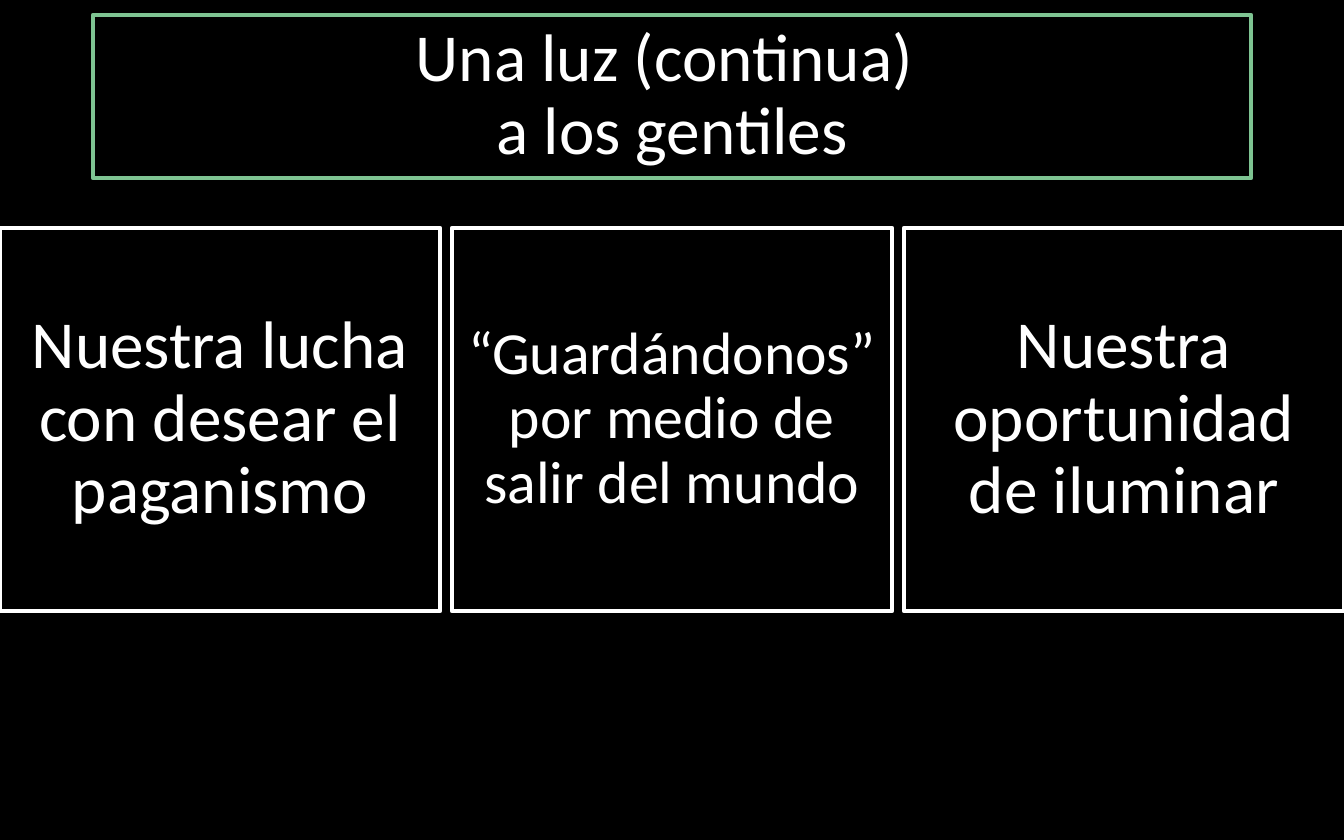
from pptx import Presentation
from pptx.dml.color import RGBColor
from pptx.enum.shapes import MSO_SHAPE
from pptx.enum.text import MSO_ANCHOR, PP_ALIGN
from pptx.util import Pt

TITLE = "Una luz (continua) \va los gentiles"
THEMES = [
    ("Nuestra lucha con desear el paganismo", 36),
    ("“Guardándonos” por medio de salir del mundo", 32),
    ("Nuestra oportunidad de iluminar", 36),
]
COLORS = {"background": "000000", "title_border": "7EC492",
          "theme_border": "FFFFFF", "text": "FFFFFF"}

EMU_PER_PX = 914400 / 134.4
SLIDE_WIDTH, SLIDE_HEIGHT = 1344, 840
TITLE_BOX = (93, 15, 1158, 163)
THEME_TOP, THEME_WIDTH, THEME_HEIGHT = 228, 440, 383
THEME_STEP = (SLIDE_WIDTH - THEME_WIDTH) // (len(THEMES) - 1)


def px(length):
    return round(length * EMU_PER_PX)


def color(name):
    return RGBColor.from_string(COLORS[name])


def add_box(slide, box, text, size, border):
    panel = slide.shapes.add_shape(MSO_SHAPE.RECTANGLE, *map(px, box))
    panel.shadow.inherit = False
    panel.fill.background()
    panel.line.color.rgb = color(border)
    panel.line.width = Pt(2.5)
    frame = panel.text_frame
    frame.word_wrap = True
    frame.vertical_anchor = MSO_ANCHOR.MIDDLE
    paragraph = frame.paragraphs[0]
    paragraph.text = text
    paragraph.alignment = PP_ALIGN.CENTER
    paragraph.line_spacing = 0.9
    paragraph.font.name = "Calibri"
    paragraph.font.size = Pt(size)
    paragraph.font.color.rgb = color("text")


def main():
    deck = Presentation()
    deck.slide_width, deck.slide_height = px(SLIDE_WIDTH), px(SLIDE_HEIGHT)
    slide = deck.slides.add_slide(deck.slide_layouts[6])
    slide.background.fill.solid()
    slide.background.fill.fore_color.rgb = color("background")

    add_box(slide, TITLE_BOX, TITLE, 36, "title_border")
    for column, (theme, size) in enumerate(THEMES):
        box = (column * THEME_STEP, THEME_TOP, THEME_WIDTH, THEME_HEIGHT)
        add_box(slide, box, theme, size, "theme_border")

    deck.save("out.pptx")


if __name__ == "__main__":
    main()
